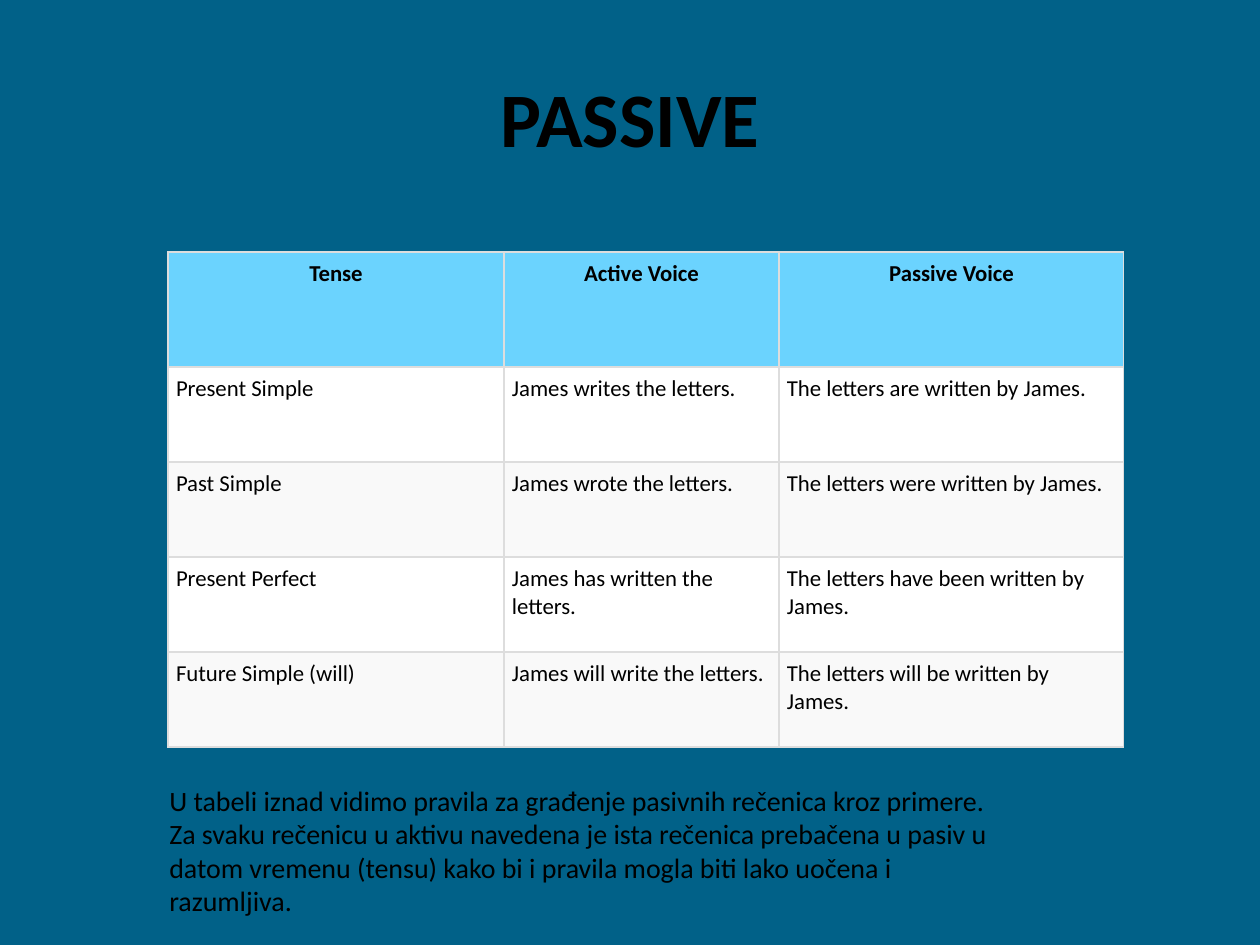
from typing import NamedTuple

from lxml import etree
from pptx import Presentation
from pptx.dml.color import RGBColor
from pptx.enum.text import MSO_ANCHOR, MSO_AUTO_SIZE, PP_ALIGN
from pptx.oxml.ns import qn
from pptx.util import Emu, Pt

EMU_PER_PX = 914400 // 126
CENTER, LEFT = PP_ALIGN.CENTER, PP_ALIGN.LEFT
MIDDLE = MSO_ANCHOR.MIDDLE
GROW = MSO_AUTO_SIZE.SHAPE_TO_FIT_TEXT
TITLE_ONLY = 5

FONT = "Calibri"
BLACK, BACKGROUND, BORDER = "000000", "016188", "DDDDDD"
HEADER_FILL, ROW_FILLS = "6BD3FE", ("FFFFFF", "F9F9F9")
CELL_MARGIN = 8
COLUMN_WIDTHS = (336, 275, 345)
HEADER_HEIGHT, ROW_HEIGHT = 115, 95


class Area(NamedTuple):
    left: int
    top: int
    width: int
    height: int


class TenseRow(NamedTuple):
    tense: str
    active: str
    passive: str


TITLE_AREA = Area(63, 38, 1134, 157)
TABLE_AREA = Area(168, 252, sum(COLUMN_WIDTHS), HEADER_HEIGHT + 4 * ROW_HEIGHT)
NOTE_AREA = Area(157, 777, 861, 149)

ROWS = (
    TenseRow("Tense", "Active Voice", "Passive Voice"),
    TenseRow("Present Simple", "James writes the letters.",
             "The letters are written by James."),
    TenseRow("Past Simple", "James wrote the letters.",
             "The letters were written by James."),
    TenseRow("Present Perfect", "James has written the letters.",
             "The letters have been written by James."),
    TenseRow("Future Simple (will)", "James will write the letters.",
             "The letters will be written by James."),
)
NOTE = (
    "U tabeli iznad vidimo pravila za građenje pasivnih rečenica kroz primere. "
    "Za svaku rečenicu u aktivu navedena je ista rečenica prebačena u pasiv u "
    "datom vremenu (tensu) kako bi i pravila mogla biti lako uočena i razumljiva."
)


def px(length: int) -> Emu:
    return Emu(length * EMU_PER_PX)


def color(value: str) -> RGBColor:
    return RGBColor.from_string(value)


def write(frame, text: str, size: int, bold: bool = False, align=LEFT) -> None:
    frame.word_wrap = True
    para = frame.paragraphs[0]
    para.text = text
    para.alignment = align
    para.font.name = FONT
    para.font.size = Pt(size)
    para.font.bold = bold
    para.font.color.rgb = color(BLACK)


def add_borders(cell) -> None:
    """Draw the four sides; they must come before the fill in the cell XML."""
    properties = cell._tc.get_or_add_tcPr()
    for position, side in enumerate(("a:lnL", "a:lnR", "a:lnT", "a:lnB")):
        line = etree.Element(qn(side), w=str(Pt(0.75)))
        fill = etree.SubElement(line, qn("a:solidFill"))
        etree.SubElement(fill, qn("a:srgbClr"), val=BORDER)
        properties.insert(position, line)


def format_cell(cell, text: str, fill: str, is_header: bool) -> None:
    cell.margin_left = cell.margin_right = px(CELL_MARGIN)
    cell.margin_top = cell.margin_bottom = px(CELL_MARGIN)
    cell.fill.solid()
    cell.fill.fore_color.rgb = color(fill)
    write(cell.text_frame, text, 13, is_header, CENTER if is_header else LEFT)
    add_borders(cell)


def add_title(page) -> None:
    title = page.shapes.title
    title.left, title.top, title.width, title.height = map(px, TITLE_AREA)
    title.text_frame.vertical_anchor = MIDDLE
    write(title.text_frame, "PASSIVE", 44, True, CENTER)


def add_tense_table(page) -> None:
    table = page.shapes.add_table(
        len(ROWS), len(COLUMN_WIDTHS), *map(px, TABLE_AREA)).table
    for column, width in zip(table.columns, COLUMN_WIDTHS):
        column.width = px(width)
    for index, tense_row in enumerate(ROWS):
        is_header = index == 0
        table.rows[index].height = px(HEADER_HEIGHT if is_header else ROW_HEIGHT)
        fill = HEADER_FILL if is_header else ROW_FILLS[(index - 1) % 2]
        for column_index, text in enumerate(tense_row):
            format_cell(table.cell(index, column_index), text, fill, is_header)


def add_note(page) -> None:
    box = page.shapes.add_textbox(*map(px, NOTE_AREA))
    write(box.text_frame, NOTE, 16)
    box.text_frame.auto_size = GROW


def main() -> None:
    deck = Presentation()
    deck.slide_width, deck.slide_height = px(1260), px(945)
    page = deck.slides.add_slide(deck.slide_layouts[TITLE_ONLY])
    page.background.fill.solid()
    page.background.fill.fore_color.rgb = color(BACKGROUND)
    add_title(page)
    add_tense_table(page)
    add_note(page)
    deck.save("out.pptx")


if __name__ == "__main__":
    main()
